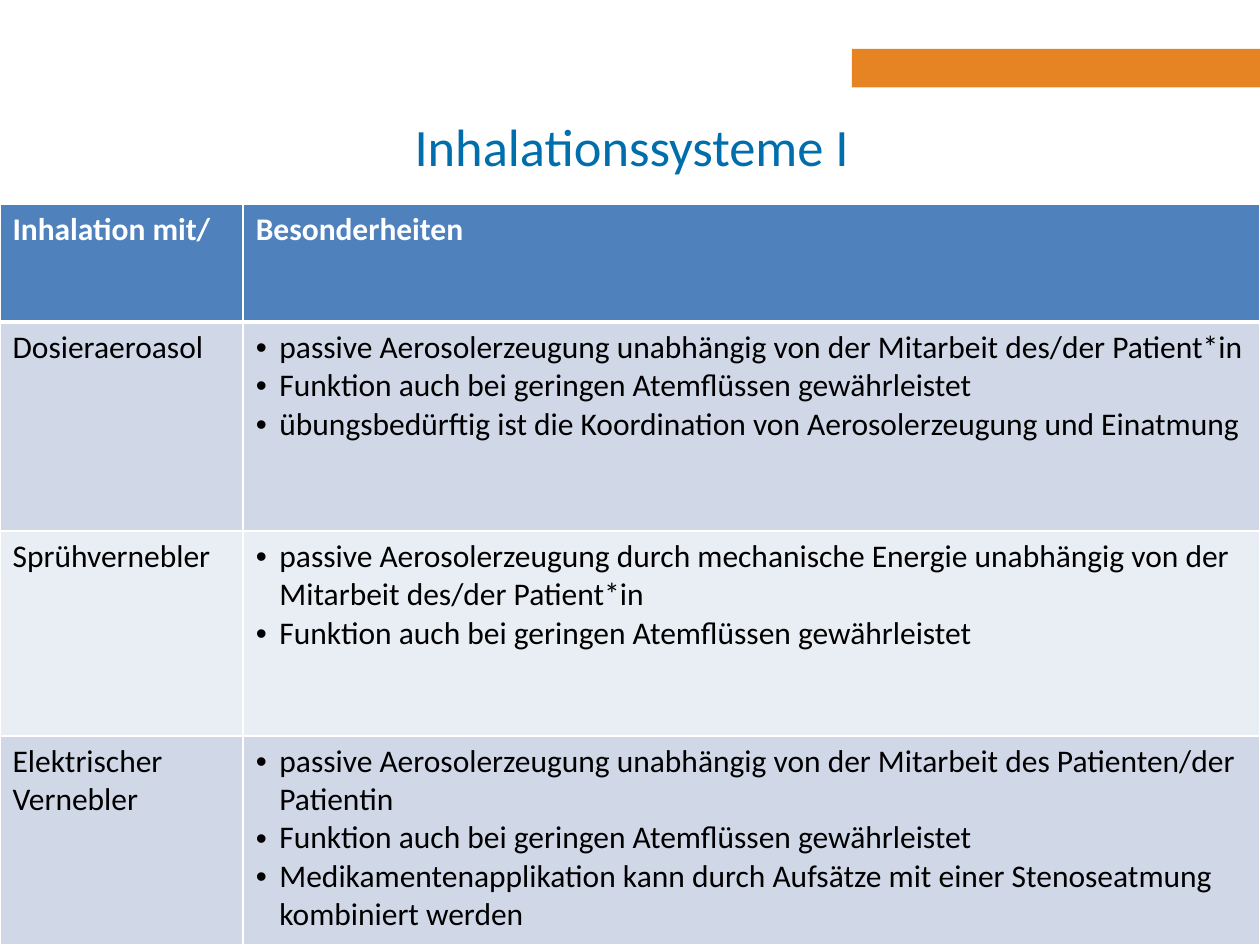
from lxml.etree import SubElement
from pptx import Presentation
from pptx.dml.color import RGBColor as Color
from pptx.enum.shapes import MSO_SHAPE as Shape
from pptx.enum.text import MSO_ANCHOR as Anchor, PP_ALIGN as Align
from pptx.oxml import parse_xml
from pptx.oxml.ns import nsdecls, qn
from pptx.util import Pt

TITLE = "Inhalationssysteme I"
HEADER = ("Inhalation mit/", "Besonderheiten")
SYSTEMS = [
    ("Dosieraeroasol", [
        "passive Aerosolerzeugung unabhängig von der Mitarbeit des/der Patient*in",
        "Funktion auch bei geringen Atemflüssen gewährleistet",
        "übungsbedürftig ist die Koordination von Aerosolerzeugung und Einatmung",
    ]),
    ("Sprühvernebler", [
        "passive Aerosolerzeugung durch mechanische Energie unabhängig von der "
        "Mitarbeit des/der Patient*in",
        "Funktion auch bei geringen Atemflüssen gewährleistet",
    ]),
    ("Elektrischer Vernebler", [
        "passive Aerosolerzeugung unabhängig von der Mitarbeit des Patienten/der Patientin",
        "Funktion auch bei geringen Atemflüssen gewährleistet",
        "Medikamentenapplikation kann durch Aufsätze mit einer Stenoseatmung "
        "kombiniert werden",
    ]),
]

THEME = {
    "accent": "E68323",
    "header_fill": "4F81BD",
    "bands": ("D0D8E8", "E9EDF4"),
    "border": "FFFFFF",
    "title": {"name": "Calibri", "size": Pt(30), "bold": False, "color": "006EAC"},
    "header": {"name": "Calibri", "size": Pt(18), "bold": True, "color": "FFFFFF"},
    "body": {"name": "Calibri", "size": Pt(18), "bold": False, "color": "000000"},
}
WIDTH, HEIGHT = 720, 540
TABLE_TOP = 116.8
COLUMNS = (139, 581)
ROWS = (67.2, 119.5, 117, 119.5)
BULLET_INDENT = 13.5


def apply_format(font, style):
    for name, value in style.items():
        if name == "color":
            font.color.rgb = Color.from_string(value)
        else:
            setattr(font, name, value)


def place(shape, left, top, width, height):
    for name, value in zip(("left", "top", "width", "height"), (left, top, width, height)):
        setattr(shape, name, Pt(value))


def add_bullet(paragraph):
    properties = paragraph._p.get_or_add_pPr()
    properties.set("marL", str(Pt(BULLET_INDENT)))
    properties.set("indent", str(Pt(-BULLET_INDENT)))
    SubElement(properties, qn("a:buFont")).set("typeface", "Arial")
    SubElement(properties, qn("a:buChar")).set("char", "•")


def set_borders(cell, widths):
    properties = cell._tc.get_or_add_tcPr()
    for position, (side, width) in enumerate(widths.items()):
        properties.insert(position, parse_xml(
            f'<a:ln{side} {nsdecls("a")} w="{Pt(width)}"><a:solidFill>'
            f'<a:srgbClr val="{THEME["border"]}"/></a:solidFill></a:ln{side}>'))


def fill_cell(cell, content, style, fill, widths):
    bulleted = isinstance(content, list)
    lines = content if bulleted else [content]
    cell.text_frame.text = "\n".join(lines)
    for paragraph in cell.text_frame.paragraphs:
        if bulleted:
            add_bullet(paragraph)
        apply_format(paragraph.runs[0].font, style)
    cell.fill.solid()
    cell.fill.fore_color.rgb = Color.from_string(fill)
    set_borders(cell, widths)


def add_title(slide):
    title = slide.shapes.title
    place(title, 106.5, 49.7, 509, 67)
    frame = title.text_frame
    frame.text = TITLE
    frame.vertical_anchor = Anchor.MIDDLE
    paragraph = frame.paragraphs[0]
    paragraph.alignment = Align.CENTER
    apply_format(paragraph.runs[0].font, THEME["title"])


def add_accent_bar(slide):
    left = 486.8
    bar = slide.shapes.add_shape(Shape.RECTANGLE, Pt(left), Pt(28), Pt(WIDTH - left), Pt(22))
    bar.shadow.inherit = False
    bar.fill.solid()
    bar.fill.fore_color.rgb = Color.from_string(THEME["accent"])
    bar.line.fill.background()


def add_systems_table(slide):
    table = slide.shapes.add_table(
        len(ROWS), len(COLUMNS), Pt(0), Pt(TABLE_TOP), Pt(WIDTH), Pt(sum(ROWS))).table
    for column, width in zip(table.columns, COLUMNS):
        column.width = Pt(width)
    for row, height in zip(table.rows, ROWS):
        row.height = Pt(height)
    for row_index, contents in enumerate([HEADER, *SYSTEMS]):
        is_header = row_index == 0
        style = THEME["header" if is_header else "body"]
        fill = THEME["header_fill"] if is_header else THEME["bands"][(row_index - 1) % 2]
        widths = {"L": 1, "R": 1, "T": 3 if row_index == 1 else 1, "B": 3 if is_header else 1}
        for column_index, content in enumerate(contents):
            fill_cell(table.cell(row_index, column_index), content, style, fill, widths)


def main():
    presentation = Presentation()
    presentation.slide_width, presentation.slide_height = Pt(WIDTH), Pt(HEIGHT)
    slide = presentation.slides.add_slide(presentation.slide_layouts[5])
    add_accent_bar(slide)
    add_title(slide)
    add_systems_table(slide)
    presentation.save("out.pptx")


if __name__ == "__main__":
    main()
